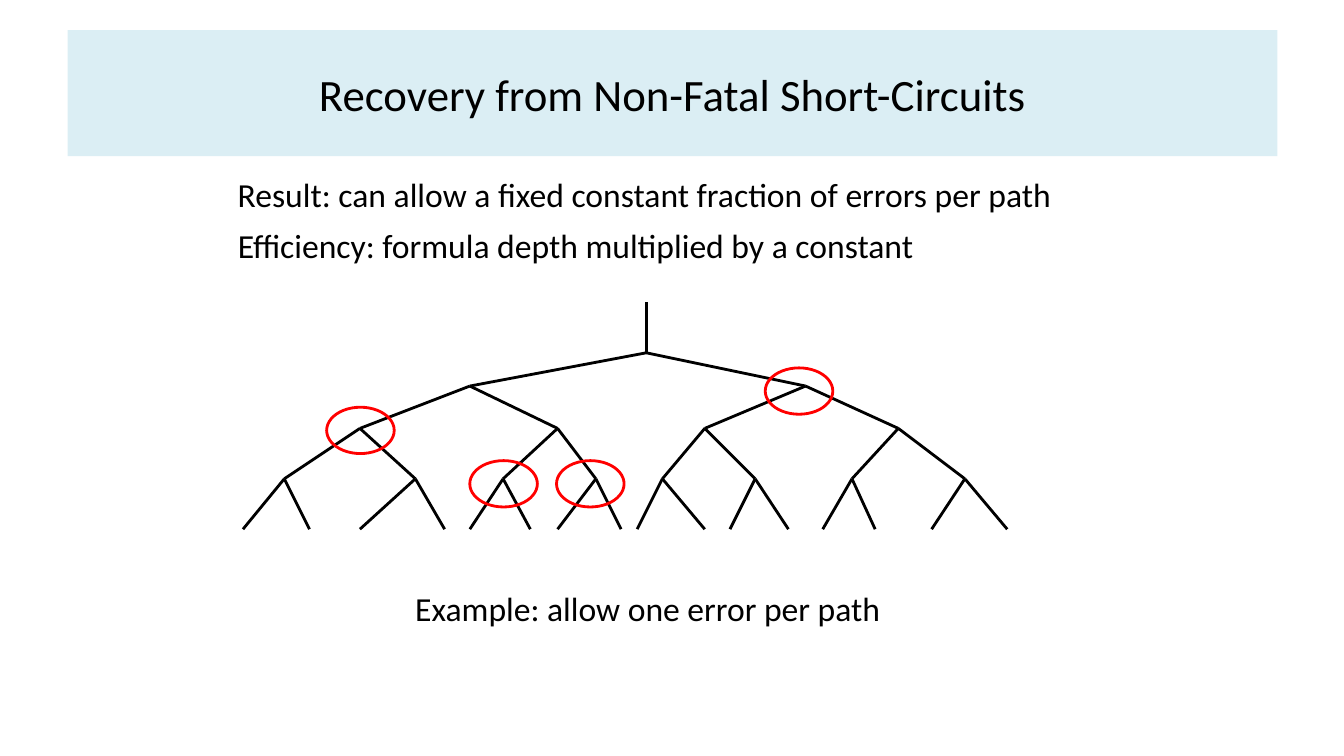
import pptx
import pptx.util
import pptx.dml.color
import pptx.enum.shapes
import pptx.enum.text
import pptx.oxml.ns
import lxml.etree

PX = 9144  # EMU per px, 100 px to the inch


def color(value):
    return pptx.dml.color.RGBColor.from_string(value)


def add_run(p, text, size):
    r = p.add_run()
    r.text = text
    r.font.name = "Calibri"
    r.font.size = pptx.util.Pt(size)
    r.font.color.rgb = color("000000")


prs = pptx.Presentation()
prs.slide_width = 1333 * PX
prs.slide_height = 750 * PX
s = prs.slides.add_slide(prs.slide_layouts[5])

# Title band
title = s.shapes.title
title.left, title.top, title.width, title.height = [v * PX for v in (67, 30, 1200, 125)]
title.fill.solid()
title.fill.fore_color.rgb = color("DBEEF4")
tf = title.text_frame
tf.vertical_anchor = pptx.enum.text.MSO_ANCHOR.MIDDLE
p = tf.paragraphs[0]
p.alignment = pptx.enum.text.PP_ALIGN.CENTER
add_run(p, "Recovery from Non-Fatal Short-Circuits", 32)

# Formula tree: node x positions by level; node i hangs from node i // 2 above
level_tops = [300, 350, 383, 425, 475, 525]
level_nodes = [
    [641],
    [641],
    [466, 799],
    [357, 553, 699, 891],
    [282, 412, 499, 591, 657, 749, 845, 957],
    [241, 307, 357, 441, 466, 526, 553, 616,
     632, 699, 724, 782, 816, 868, 924, 999],
]
for level in range(1, len(level_nodes)):
    for i, x in enumerate(level_nodes[level]):
        parent_x = level_nodes[level - 1][i // 2]
        branch = s.shapes.add_connector(
            pptx.enum.shapes.MSO_CONNECTOR.STRAIGHT,
            parent_x * PX, level_tops[level - 1] * PX, x * PX, level_tops[level] * PX)
        branch.line.color.rgb = color("000000")
        branch.line.width = pptx.util.Pt(2)
        lxml.etree.SubElement(branch._element.spPr, pptx.oxml.ns.qn("a:effectLst"))

# Red rings around the faulty gates
for x, y in [(324, 404), (466, 457), (552, 457), (759, 365)]:
    ring = s.shapes.add_shape(
        pptx.enum.shapes.MSO_SHAPE.OVAL, x * PX, y * PX, 67 * PX, 46 * PX)
    ring.shadow.inherit = False
    ring.fill.background()
    ring.line.color.rgb = color("FF0000")
    ring.line.width = pptx.util.Pt(2)

# Statements and caption
for x, y, w, h, text in [
    (226, 168, 827, 50, "Result: can allow a fixed constant fraction of errors per path"),
    (402, 578, 486, 51, "Example: allow one error per path"),
    (226, 218, 698, 50, "Efficiency: formula depth multiplied by a constant"),
]:
    tf = s.shapes.add_textbox(x * PX, y * PX, w * PX, h * PX).text_frame
    tf.word_wrap = False
    tf.auto_size = pptx.enum.text.MSO_AUTO_SIZE.SHAPE_TO_FIT_TEXT
    add_run(tf.paragraphs[0], text, 24)

prs.save("out.pptx")
